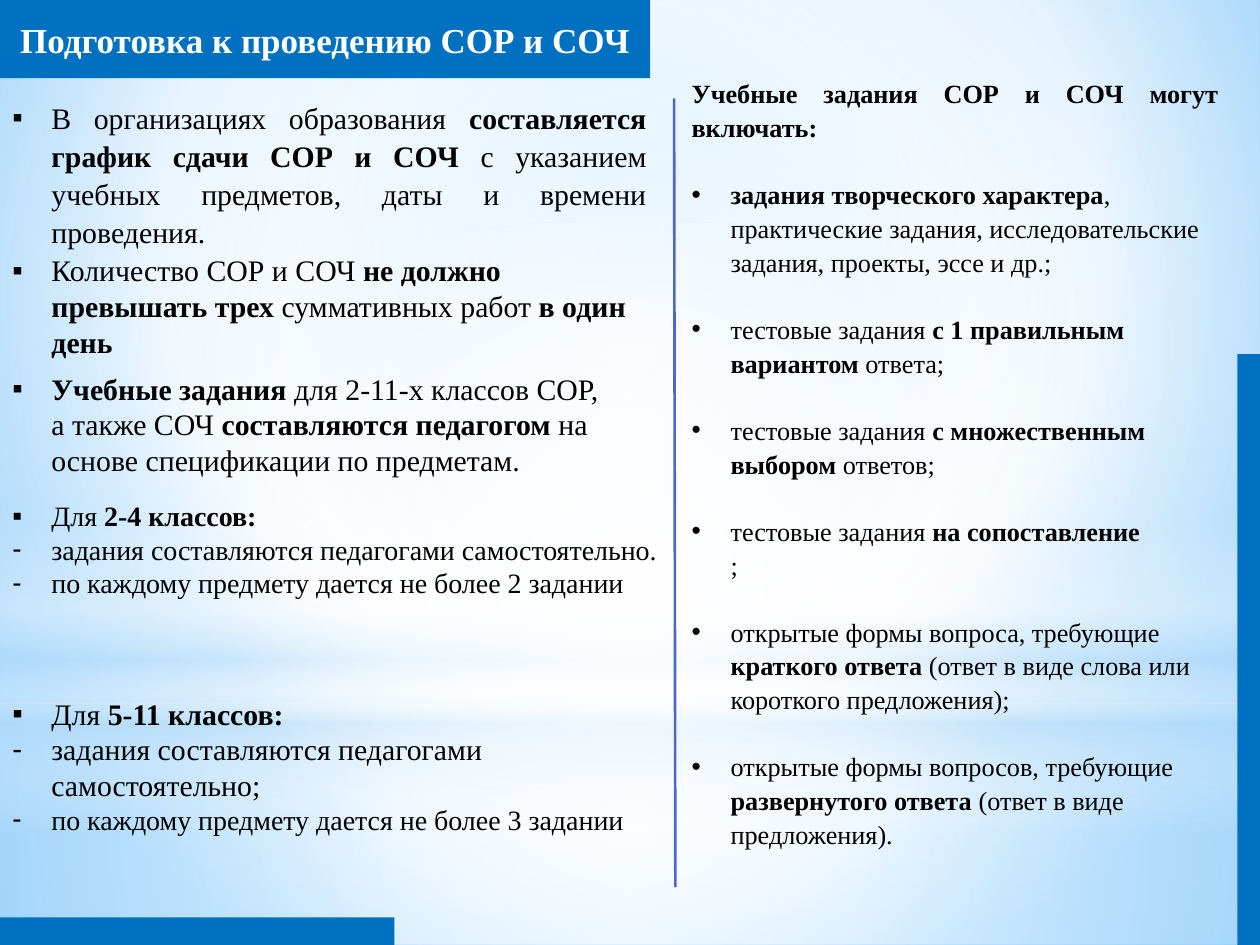
from collections import namedtuple

from lxml import etree
from pptx import Presentation
from pptx.dml.color import RGBColor
from pptx.enum.shapes import MSO_CONNECTOR as LINE, MSO_SHAPE as SHAPE
from pptx.enum.text import MSO_ANCHOR, MSO_AUTO_SIZE, PP_ALIGN as ALIGN
from pptx.oxml import parse_xml
from pptx.oxml.ns import nsdecls, qn
from pptx.util import Inches, Pt

COLORS = {"accent": "0070C0", "rule": "4E67C8", "text": "000000", "white": "FFFFFF",
          "haze": "B4DCFA", "sky": "9ED5FF", "deep": "5BB9FF"}
FONT = "Times New Roman"
UNIT = Inches(0.1)  # the slide is a grid of 100 columns by 75 rows
COLS, ROWS = 100, 75
INDENT = Inches(0.31)
Box = namedtuple("Box", "x y w h")


def inside(box, x, y, w, h):
    """A box placed in grid units from the corner of another."""
    return Box(box.x + x, box.y + y, w, h)


def emu(box):
    return [round(value * UNIT) for value in box]


def color(name):
    return RGBColor.from_string(COLORS[name])


def set_gradient(holder, stops, center=None):
    """Swap a solid fill for a gradient: circular round a centre, else vertical."""
    marks = "".join(
        f'<a:gs pos="{pos * 1000}"><a:srgbClr val="{COLORS[name]}">'
        f'<a:alpha val="{alpha * 1000}"/></a:srgbClr></a:gs>' for pos, name, alpha in stops)
    if center:
        edges = " ".join(f'{side}="{share * 1000}"' for side, share in zip("ltrb", center))
        course = f'<a:path path="circle"><a:fillToRect {edges}/></a:path>'
    else:
        course = '<a:lin ang="5400000" scaled="0"/>'
    solid = holder.find(qn("a:solidFill"))
    solid.getparent().replace(solid, parse_xml(
        f'<a:gradFill {nsdecls("a")} rotWithShape="1"><a:gsLst>{marks}</a:gsLst>{course}</a:gradFill>'))


def add_block(page, box, fill="accent", kind=SHAPE.RECTANGLE):
    block = page.shapes.add_shape(kind, *emu(box))
    block.shadow.inherit = False
    block.fill.solid()
    block.fill.fore_color.rgb = color(fill)
    block.line.fill.background()
    return block


def set_bullet(para, mark):
    props = para._p.get_or_add_pPr()
    props.set("marL", str(INDENT))
    props.set("indent", str(-INDENT))
    etree.SubElement(props, qn("a:buFont")).set("typeface", "Arial")
    etree.SubElement(props, qn("a:buChar")).set("char", mark)


def fill_para(para, text, size, name="text"):
    """Write text in which ** switches bold on and off and a newline breaks the line."""
    para.font.size, para.font.name = Pt(size), FONT
    para.font.color.rgb = color(name)
    for i, part in enumerate(text.split("**")):
        for j, piece in enumerate(part.split("\n")):
            if j:
                para.add_line_break()
            if piece:
                span = para.add_run()
                span.text = piece
                span.font.bold = i % 2 == 1


def add_text(page, box, items, size, spacing=None, align=None, gap=0):
    """Items are (bullet, text) or (bullet, text, size, align)."""
    frame = page.shapes.add_textbox(*emu(box)).text_frame
    frame.word_wrap = True
    frame.auto_size = MSO_AUTO_SIZE.SHAPE_TO_FIT_TEXT
    for i, (mark, text, *own) in enumerate(items):
        para = frame.add_paragraph() if i else frame.paragraphs[0]
        own_size, own_align = own or (size, align)
        para.alignment = own_align
        if spacing:
            para.line_spacing = spacing
        if gap and i:
            para.space_before = Pt(gap)
        if mark:
            set_bullet(para, mark)
        fill_para(para, text, own_size)


def draw_backdrop(page, box):
    page.background.fill.solid()
    set_gradient(page.element.find(".//" + qn("p:bgPr")),
                 [(0, "sky", 100), (60, "white", 100), (100, "deep", 100)], (20, 10, 20, 60))
    middle = (50, 50, 50, 50)
    layers = [
        (inside(box, 0, 55.8, box.w, 19.2), SHAPE.RECTANGLE, middle,
         [(0, "white", 91), (37, "white", 76), (100, "haze", 79)]),
        (inside(box, 0, 0, box.w, 55.8), SHAPE.RECTANGLE, middle,
         [(0, "white", 89), (48, "white", 62), (100, "haze", 79)]),
        (inside(box, 0, 41.2, box.w, 25), SHAPE.RECTANGLE, None,
         [(0, "white", 0), (29, "white", 30), (45, "haze", 40),
          (55, "white", 26), (65, "haze", 60), (100, "white", 0)]),
        (inside(box, 0, 17.5, box.w, 55.8), SHAPE.OVAL, middle,
         [(0, "white", 100), (56, "white", 0)]),
    ]
    for area, kind, center, stops in layers:
        layer = add_block(page, area, "white", kind)
        set_gradient(layer._element.spPr, stops, center)


def draw_title(page, box):
    banner = add_block(page, box)
    frame = banner.text_frame
    frame.vertical_anchor = MSO_ANCHOR.MIDDLE
    frame.word_wrap = False
    frame.paragraphs[0].alignment = ALIGN.CENTER
    fill_para(frame.paragraphs[0], "**Подготовка к проведению СОР и СОЧ**", 20, "white")


def draw_rules(page, box):
    """Left column: three general rules, then the rules by grade."""
    add_text(page, inside(box, 0, 0, 52.3, 13.3), [
        ("▪", "В организациях образования **составляется график сдачи СОР и СОЧ** "
              "с указанием учебных предметов, даты и времени проведения.")],
        17, spacing=1.07, align=ALIGN.JUSTIFY)
    add_text(page, inside(box, 0, 12.3, 53.1, 9.6), [
        ("▪", "Количество СОР и СОЧ **не должно превышать трех** "
              "суммативных работ **в один день**")], 17)
    add_text(page, inside(box, 0, 21.7, 50, 9.6), [
        ("▪", "**Учебные задания **для 2-11-х классов СОР, а также СОЧ "
              "**составляются педагогом **на основе спецификации по предметам.")], 17)
    grades = [(31.9, 9.1, 16, "2-4", ".", 2), (47.5, 12.3, 17, "5-11", ";", 3)]
    for top, height, size, grade, stop, count in grades:
        add_text(page, inside(box, 0, top, box.w, height), [
            ("▪", f"Для **{grade} классов:**"),
            ("-", f"задания составляются педагогами самостоятельно{stop}"),
            ("-", f"по каждому предмету дается не более {count} задании", 16, None)], size)


def draw_task_types(page, box):
    """Right column: what the tasks may include."""
    tasks = [
        "**задания творческого характера**, практические задания, "
        "исследовательские задания, проекты, эссе и др.;",
        "тестовые задания **с 1 правильным вариантом **ответа;",
        "тестовые задания **с множественным выбором **ответов;",
        "тестовые задания **на сопоставление**\n;",
        "открытые формы вопроса, требующие **краткого ответа **"
        "(ответ в виде слова или короткого предложения);",
        "открытые формы вопросов, требующие **развернутого ответа **"
        "(ответ в виде предложения).",
    ]
    heading = ("", "**Учебные задания СОР и СОЧ могут включать:**", 15, ALIGN.JUSTIFY)
    add_text(page, box, [heading] + [("•", task) for task in tasks],
             15, spacing=1.07, gap=19.2)


def draw_divider(page, box):
    left, top, width, height = emu(box)
    rule = page.shapes.add_connector(LINE.STRAIGHT, left + width, top + height, left, top)
    rule.line.color.rgb = color("rule")
    rule.line.width = Pt(1.5)
    etree.SubElement(rule._element.spPr, qn("a:effectLst"))


def main():
    deck = Presentation()
    deck.slide_width, deck.slide_height = COLS * UNIT, ROWS * UNIT
    page = deck.slides.add_slide(deck.slide_layouts[6])
    draw_backdrop(page, Box(0, 0, COLS, ROWS))
    draw_title(page, Box(0, 0, 51.6, 6.2))
    draw_rules(page, Box(0, 7.2, 54.7, 60))
    draw_task_types(page, Box(53.9, 5.5, 43.8, 63))
    # Edge bars and the line between the columns
    add_block(page, Box(98.2, 28.1, 1.8, 46.9))
    add_block(page, Box(0, 72.8, 31.3, 2.2))
    draw_divider(page, Box(53.5, 7.8, 0.1, 62.6))
    deck.save("out.pptx")


if __name__ == "__main__":
    main()
